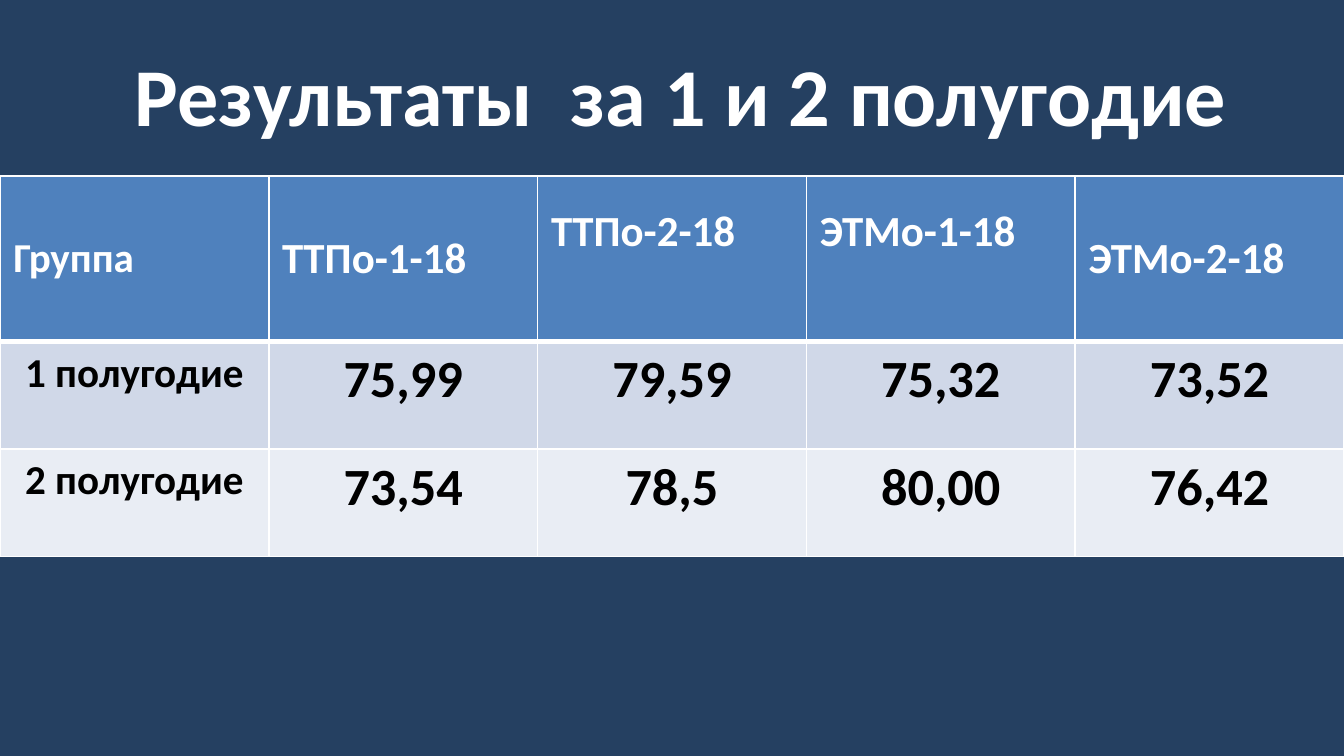
from lxml import etree
from pptx import Presentation
from pptx.dml.color import RGBColor
from pptx.enum import text
from pptx.oxml import ns
from pptx.util import Inches, Pt

WHITE, BLACK, NAVY, BLUE = "FFFFFF", "000000", "254061", "4F81BD"
BANDS = ["D0D8E8", "E9EDF4"]
GROUPS = ["Группа", "ТТПо-1-18", "ТТПо-2-18", "ЭТМо-1-18", "ЭТМо-2-18"]
RESULTS = [
    ["1 полугодие", "75,99", "79,59", "75,32", "73,52"],
    ["2 полугодие", "73,54", "78,5", "80,00", "76,42"],
]
RAISED = {"ТТПо-2-18", "ЭТМо-1-18"}


def rgb(color):
    """Turn a hex string into a colour."""
    return RGBColor.from_string(color)


def paint(fill, color):
    """Give a fill one solid colour."""
    fill.solid()
    fill.fore_color.rgb = rgb(color)


def write(tf, content, size=22, color=WHITE, align=text.PP_ALIGN.LEFT):
    """Write one bold paragraph into a text frame."""
    p = tf.paragraphs[0]
    p.alignment = align
    r = p.add_run()
    r.text = content
    r.font.name, r.font.size, r.font.bold = "Calibri", Pt(size), True
    r.font.color.rgb = rgb(color)


def border(cell, **widths):
    """Draw white cell borders, with widths in points by side."""
    tc_pr = cell._tc.get_or_add_tcPr()
    for side, width in widths.items():
        ln = etree.SubElement(tc_pr, ns.qn(f"a:ln{side}"), w=str(Pt(width)))
        fill = etree.SubElement(ln, ns.qn("a:solidFill"))
        etree.SubElement(fill, ns.qn("a:srgbClr"), val=WHITE)


def add_title(s, content):
    """Add the centred slide title."""
    sp = s.shapes.add_textbox(Inches(0.5), Inches(0.23), Inches(9), Inches(0.94))
    tf = sp.text_frame
    tf.word_wrap = True
    tf.vertical_anchor = text.MSO_ANCHOR.MIDDLE
    write(tf, content, size=44, align=text.PP_ALIGN.CENTER)


def add_results(s):
    """Add the table of results by group and half-year."""
    rows = [GROUPS] + RESULTS
    heights = [1.23, 0.8, 0.8]
    table = s.shapes.add_table(
        len(rows), len(GROUPS), 0, Inches(1.31), Inches(10), Inches(sum(heights))
    ).table
    for i, (row, height) in enumerate(zip(rows, heights)):
        table.rows[i].height = Inches(height)
        for j, content in enumerate(row):
            cell = table.cell(i, j)
            border(cell, L=1, R=1, T=3 if i == 1 else 1, B=3 if i == 0 else 1)
            if i == 0:
                paint(cell.fill, BLUE)
                cell.vertical_anchor = text.MSO_ANCHOR.MIDDLE
                if content in RAISED:
                    cell.margin_bottom = Inches(0.45)
                write(cell.text_frame, content, size=23 if j else 22)
            else:
                paint(cell.fill, BANDS[i - 1])
                write(cell.text_frame, content, size=28 if j else 22,
                      color=BLACK, align=text.PP_ALIGN.CENTER)


def main():
    """Build the slide and save it."""
    prs = Presentation()
    prs.slide_width = Inches(10)
    prs.slide_height = prs.slide_width * 9 // 16
    s = prs.slides.add_slide(prs.slide_layouts[6])
    paint(s.background.fill, NAVY)
    add_title(s, " Результаты  за 1 и 2 полугодие")
    add_results(s)
    prs.save("out.pptx")


if __name__ == "__main__":
    main()
